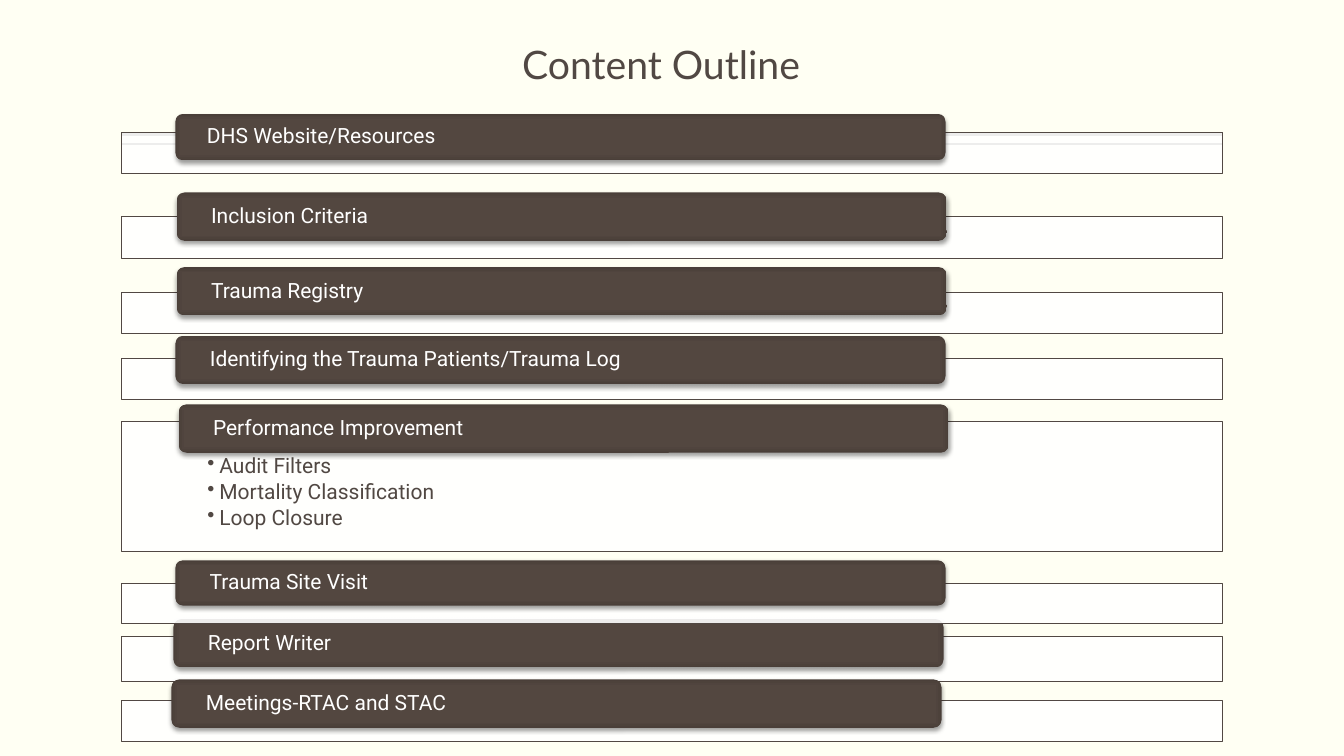
from lxml import etree
from pptx import Presentation
from pptx.dml.color import RGBColor
from pptx.enum.shapes import MSO_CONNECTOR as Link, MSO_SHAPE as Form
from pptx.enum.text import MSO_ANCHOR as Anchor, PP_ALIGN as Align
from pptx.oxml import parse_xml
from pptx.oxml.ns import nsdecls, qn
from pptx.util import Cm, Pt

CREAM = RGBColor(0xFF, 0xFF, 0xF3)
WHITE = RGBColor(0xFF, 0xFF, 0xFF)
BROWN = RGBColor(0x51, 0x48, 0x43)

GLOW = f"""<a:gradFill {nsdecls('a')} rotWithShape="1"><a:gsLst>
<a:gs pos="0"><a:srgbClr val="544740"/></a:gs>
<a:gs pos="71000"><a:srgbClr val="534740"/></a:gs>
<a:gs pos="100000"><a:srgbClr val="4A3F39"/></a:gs></a:gsLst>
<a:path path="rect"><a:fillToRect l="50000" t="50000" r="50000" b="50000"/></a:path>
</a:gradFill>"""
SHADE = f"""<a:effectLst {nsdecls('a')}>
<a:outerShdw blurRad="39370" dist="25400" dir="5400000" rotWithShape="0">
<a:srgbClr val="000000"><a:alpha val="38000"/></a:srgbClr></a:outerShdw></a:effectLst>"""

LEFT, WIDE = 3.07, 27.74
BAR = 19.41
ROWS = [
    ("Inclusion Criteria", 5.46, 1.04, 4.45, 4.85, 1.22, 0.81),
    ("Trauma Registry", 7.37, 1.04, 4.45, 6.73, 1.22, 0.81),
    ("Identifying the Trauma Patients/Trauma Log", 9.02, 1.04, 4.42, 8.46, 1.22, 0.81),
    ("Performance Improvement", 10.62, 3.28, 4.5, 10.19, 1.22, 0.81),
    ("Report Writer", 16.03, 1.14, 4.37, 15.6, 1.22, 0.81),
    ("Meetings-RTAC and STAC", 17.65, 1.04, 4.32, 17.12, 1.22, 0.81),
    ("Trauma Site Visit", 14.71, 0.99, 4.42, 14.12, 1.14, 0.81),
    ("DHS Website/Resources", 3.33, 1.04, 4.42, 2.87, 1.17, 0.74),
]
POINTS = {
    "Performance Improvement": "Audit Filters\nMortality Classification\nLoop Closure",
}


def write(box, text, size=15, font="Roboto", color=WHITE, align=Align.LEFT,
          anchor=Anchor.MIDDLE, side=0, top=0, base=0, dots=False):
    frame = box.text_frame
    frame.word_wrap = True
    frame.vertical_anchor = anchor
    frame.margin_left = frame.margin_right = Cm(side)
    frame.margin_top, frame.margin_bottom = Cm(top), Cm(base)
    frame.text = text
    for para in frame.paragraphs:
        para.alignment = align
        para.line_spacing = 0.9
        if dots:
            para.space_after = Pt(2.25)
            props = para._p.get_or_add_pPr()
            props.set("marL", str(Cm(0.3)))
            props.set("indent", str(-Cm(0.3)))
            etree.SubElement(props, qn("a:buChar")).set("char", "•")
        para.font.size = Pt(size)
        para.font.name = font
        para.font.color.rgb = color


deck = Presentation()
deck.slide_width, deck.slide_height = Cm(33.87), Cm(19.05)
slide = deck.slides.add_slide(deck.slide_layouts[6])
slide.background.fill.solid()
slide.background.fill.fore_color.rgb = CREAM
shapes = slide.shapes

for y, weight in ((3.38, 3), (3.63, 1)):
    rule = shapes.add_connector(Link.STRAIGHT, Cm(LEFT + WIDE), Cm(y), Cm(LEFT), Cm(y))
    rule.line.color.rgb = BROWN
    rule.line.width = Pt(weight)
    etree.SubElement(rule._element.spPr, qn("a:effectLst"))

title = shapes.add_textbox(Cm(2.79), Cm(-0.71), Cm(WIDE), Cm(3.05))
write(title, "Content Outline", size=28, font="Lato", color=BROWN,
      align=Align.CENTER, anchor=Anchor.BOTTOM, top=0.13, base=0.13)

for label, y, high, bar_x, bar_y, bar_high, side in ROWS:
    panel = shapes.add_shape(Form.RECTANGLE, Cm(LEFT), Cm(y), Cm(WIDE), Cm(high))
    panel.shadow.inherit = False
    panel.fill.solid()
    panel.fill.fore_color.rgb = WHITE
    tint = panel._element.spPr.find(qn("a:solidFill"))[0]
    etree.SubElement(tint, qn("a:alpha")).set("val", "90000")
    panel.line.color.rgb = BROWN
    panel.line.width = Pt(0.5)
    if label in POINTS:
        write(panel, POINTS[label], color=BROWN, anchor=Anchor.TOP,
              side=2.16, top=0.86, base=0.3, dots=True)

    bar = shapes.add_shape(Form.ROUNDED_RECTANGLE, Cm(bar_x), Cm(bar_y),
                           Cm(BAR), Cm(bar_high))
    bar.line.fill.background()
    props = bar._element.spPr
    props.find(qn("a:prstGeom")).addnext(parse_xml(GLOW))
    props.append(parse_xml(SHADE))
    write(bar, label, side=side)

deck.save("out.pptx")
